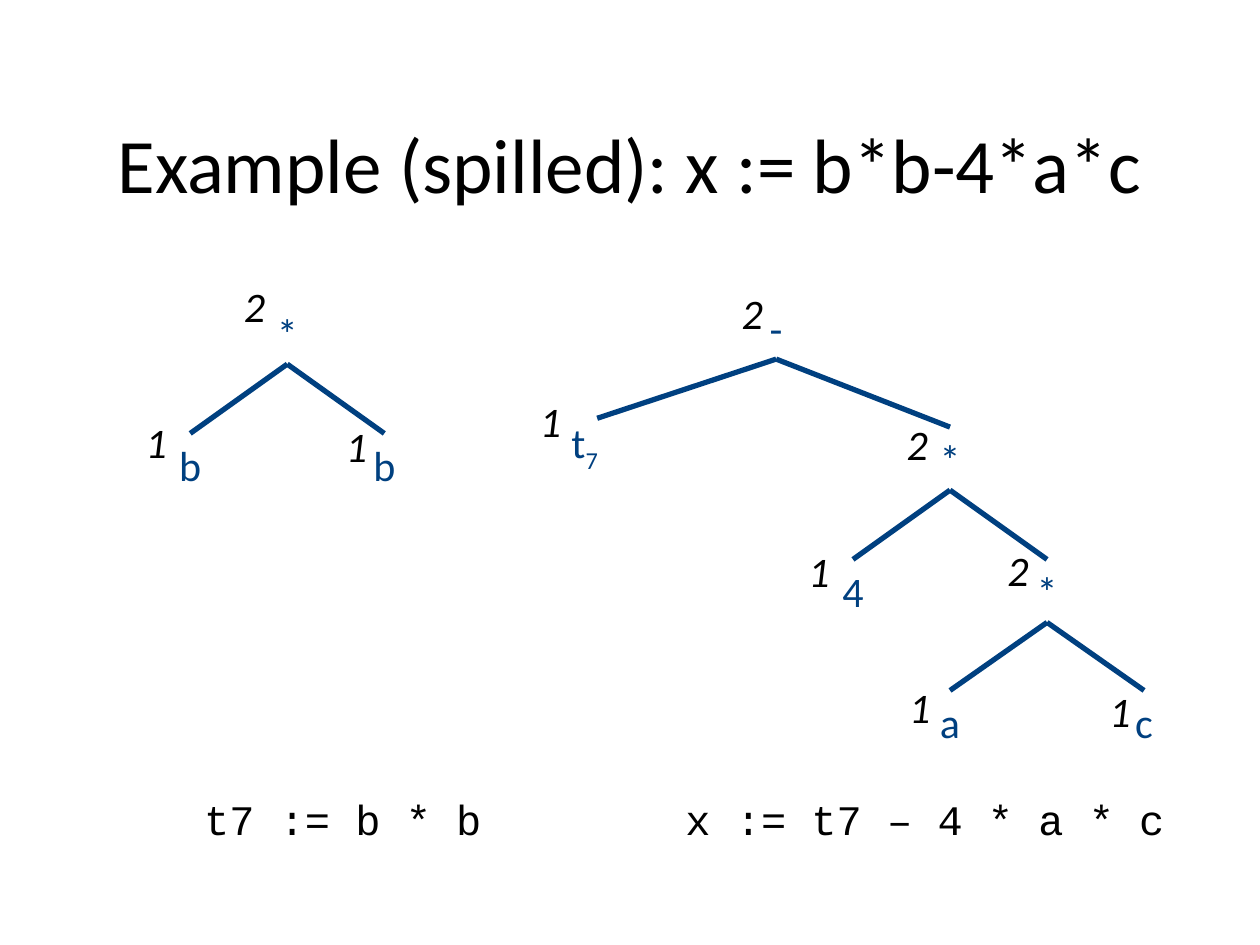
"""Build a slide of two expression trees labelled with register needs."""
from dataclasses import dataclass

from pptx import Presentation
from pptx.dml.color import RGBColor
from pptx.enum import shapes, text
from pptx.oxml import parse_xml
from pptx.oxml.ns import nsdecls
from pptx.util import Inches, Pt

INK, BLUE = "000000", "004080"
LABEL_WIDTH, LABEL_HEIGHT = 0.62, 0.5
TOP, BOTTOM = 0, 2


@dataclass
class Node:
    symbol: str
    left: float
    top: float
    need: str
    need_left: float
    need_top: float
    parent: int | None = None
    subscript: str = ""
    edge_end: tuple[float, float] | None = None


SPILLED_TREE = [
    Node("*", 1.97, 2.39, "2", 1.71, 2.18),
    Node("b", 1.2, 3.44, "1", 0.93, 3.26, parent=0),
    Node("b", 2.74, 3.44, "1", 2.52, 3.29, parent=0),
]
MAIN_TREE = [
    Node("-", 5.85, 2.35, "2", 5.66, 2.23),
    Node("t", 4.33, 3.26, "1", 4.06, 3.09, parent=0, subscript="7", edge_end=(4.74, 3.32)),
    Node("*", 7.23, 3.39, "2", 6.97, 3.27, parent=0),
    Node("4", 6.46, 4.44, "1", 6.19, 4.28, parent=2),
    Node("*", 8, 4.44, "2", 7.77, 4.27, parent=2),
    Node("a", 7.23, 5.48, "1", 6.99, 5.36, parent=4),
    Node("c", 8.77, 5.48, "1", 8.58, 5.39, parent=4),
]


def rgb(value: str) -> RGBColor:
    """Turn a hex string into a colour."""
    return RGBColor.from_string(value)


def style(run, color: str, size: float = 24, font: str = "Calibri", italic: bool = False) -> None:
    """Format one run."""
    run.font.name, run.font.size = font, Pt(size)
    run.font.color.rgb = rgb(color)
    if italic:
        run.font.italic = True


def add_label(parent, wording: str, left: float, top: float, width: float = LABEL_WIDTH,
              color: str = INK, font: str = "Calibri", italic: bool = False):
    """Add a centred line of text."""
    label = parent.add_textbox(Inches(left), Inches(top), Inches(width), Inches(LABEL_HEIGHT))
    frame = label.text_frame
    frame.word_wrap = True
    frame.auto_size = text.MSO_AUTO_SIZE.SHAPE_TO_FIT_TEXT
    frame.text = wording
    paragraph = frame.paragraphs[0]
    paragraph.alignment = text.PP_ALIGN.CENTER
    style(paragraph.runs[0], color, font=font, italic=italic)
    return label


def add_symbol(parent, node: Node):
    """Add the symbol of a tree node with its subscript."""
    symbol = add_label(parent, node.symbol, node.left, node.top, color=BLUE)
    if node.subscript:
        subscript = symbol.text_frame.paragraphs[0].add_run()
        subscript.text = node.subscript
        style(subscript, BLUE)
        subscript._r.get_or_add_rPr().set("baseline", "-25000")
    return symbol


def add_edge(parent, upper, lower, node: Node) -> None:
    """Draw the branch from a parent symbol to its child."""
    end_x, end_y = node.edge_end or (node.left + LABEL_WIDTH / 2, node.top)
    edge = parent.add_connector(shapes.MSO_CONNECTOR.STRAIGHT, upper.left, upper.top,
                                Inches(end_x), Inches(end_y))
    edge.begin_connect(upper, BOTTOM)
    if node.edge_end is None:
        edge.end_connect(lower, TOP)
    edge.line.color.rgb = rgb(BLUE)
    edge.line.width = Pt(3)
    edge._element.spPr.append(parse_xml(f"<a:effectLst {nsdecls('a')}/>"))


def add_tree(slide, nodes: list[Node]) -> None:
    """Draw one tree as a group of symbols, branches and register needs."""
    members = slide.shapes.add_group_shape().shapes
    symbols = [add_symbol(members, node) for node in nodes]
    for node, symbol in zip(nodes, symbols):
        if node.parent is not None:
            add_edge(members, symbols[node.parent], symbol, node)
    for node in nodes:
        add_label(members, node.need, node.need_left, node.need_top, italic=True)


def main() -> None:
    """Build and save the slide."""
    deck = Presentation()
    deck.slide_width, deck.slide_height = Inches(10), Inches(7.5)
    slide = deck.slides.add_slide(deck.slide_layouts[5])

    title = slide.shapes.title
    title.left, title.top = Inches(0.75), Inches(0.67)
    title.width, title.height = Inches(8.5), Inches(1.25)
    title.text_frame.text = "Example (spilled): x := b*b-4*a*c"
    title.text_frame.vertical_anchor = text.MSO_ANCHOR.MIDDLE
    heading = title.text_frame.paragraphs[0]
    heading.alignment = text.PP_ALIGN.CENTER
    style(heading.runs[0], INK, size=44)

    for tree in (SPILLED_TREE, MAIN_TREE):
        add_tree(slide, tree)

    for code, left, width in (("t7 := b * b", 1.47, 2.5), ("x := t7 – 4 * a * c", 5.2, 4.28)):
        add_label(slide.shapes, code, left, 6.25, width, font="Courier New")

    deck.save("out.pptx")


if __name__ == "__main__":
    main()
